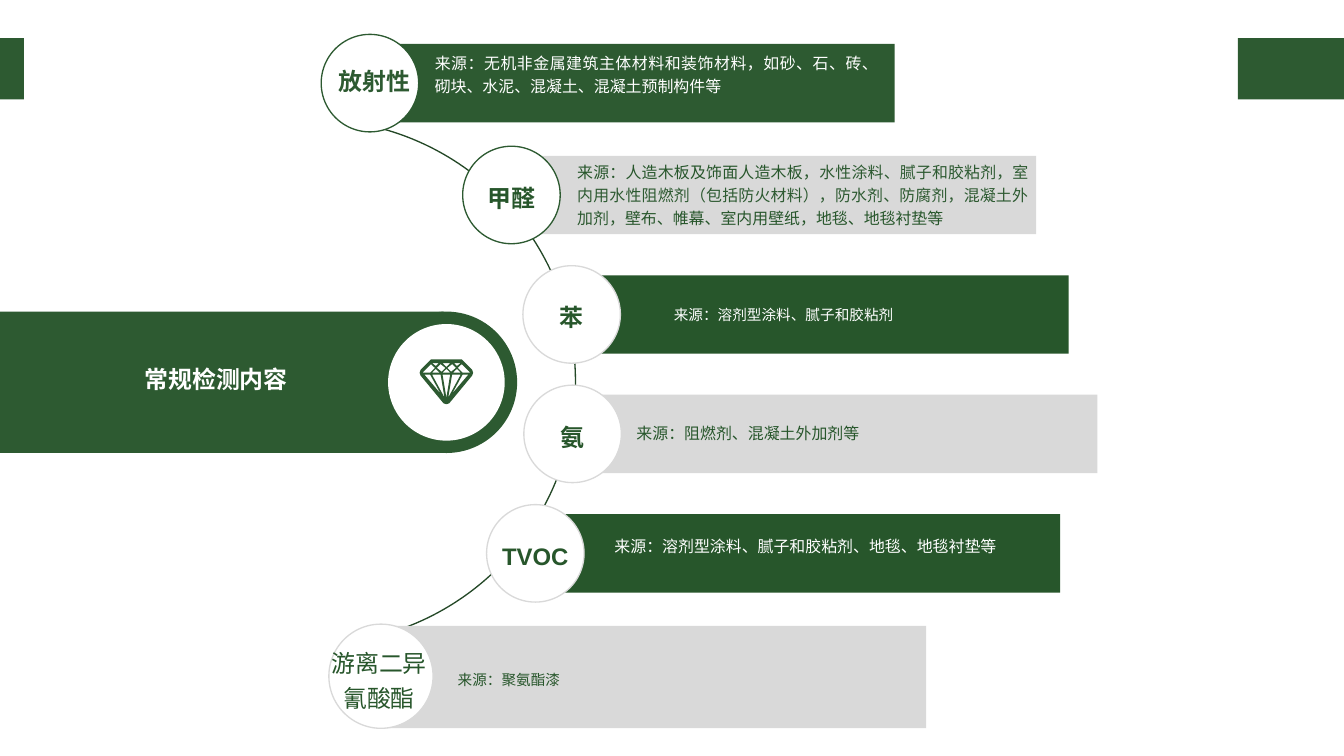
from pptx import Presentation
from pptx.dml.color import RGBColor
from pptx.enum.shapes import MSO_SHAPE
from pptx.enum.text import MSO_ANCHOR, MSO_AUTO_SIZE, PP_ALIGN
from pptx.util import Inches, Pt

RECTANGLE, OVAL, ARC = MSO_SHAPE.RECTANGLE, MSO_SHAPE.OVAL, MSO_SHAPE.ARC
LEFT, CENTER, JUSTIFY = PP_ALIGN.LEFT, PP_ALIGN.CENTER, PP_ALIGN.JUSTIFY
TOP, MIDDLE = MSO_ANCHOR.TOP, MSO_ANCHOR.MIDDLE
NO_AUTOFIT = MSO_AUTO_SIZE.NONE

GREEN, DEEP_GREEN, ARC_GREEN = "2D5A31", "27562B", "244827"
GRAY, WHITE = "D9D9D9", "FFFFFF"

presentation = Presentation()
presentation.slide_width = Inches(14.06)
presentation.slide_height = Inches(7.91)
slide = presentation.slides.add_slide(presentation.slide_layouts[5])


def write(shape, lines, size=12, bold=False, align=JUSTIFY, anchor=TOP,
          wrap=True, margins=(0.1, 0.05, 0.1, 0.05)):
    """Fill a shape with lines; each line is a list of (text, colour) runs."""
    frame = shape.text_frame
    frame.auto_size = NO_AUTOFIT
    frame.word_wrap = wrap
    frame.vertical_anchor = anchor
    (frame.margin_left, frame.margin_top,
     frame.margin_right, frame.margin_bottom) = map(Inches, margins)
    for index, runs in enumerate(lines):
        paragraph = frame.add_paragraph() if index else frame.paragraphs[0]
        paragraph.alignment = align
        paragraph.line_spacing = 1.2
        for text, color in runs:
            run = paragraph.add_run()
            run.text = text
            run.font.name = "Arial"
            run.font.size = Pt(size)
            run.font.bold = bold
            run.font.color.rgb = RGBColor.from_string(color)


def draw(kind, left, top, width, height, fill=None, line=None):
    shape = slide.shapes.add_shape(
        kind, Inches(left), Inches(top), Inches(width), Inches(height))
    shape.shadow.inherit = False
    if fill:
        shape.fill.solid()
        shape.fill.fore_color.rgb = RGBColor.from_string(fill)
    else:
        shape.fill.background()
    if line:
        shape.line.color.rgb = RGBColor.from_string(line)
        shape.line.width = Pt(1)
    else:
        shape.line.fill.background()
    return shape


# Title bar with its round end
title = slide.shapes.title
title.left, title.top = Inches(0), Inches(3.26)
title.width, title.height = Inches(4.64), Inches(1.48)
title.fill.solid()
title.fill.fore_color.rgb = RGBColor.from_string(GREEN)
write(title, [[("常规检测内容", WHITE)]], size=18, bold=True, align=LEFT,
      anchor=MIDDLE, margins=(1.51, 0, 0.1, 0.13))
draw(OVAL, 3.93, 3.26, 1.48, 1.48, GREEN)
draw(OVAL, 4.06, 3.39, 1.22, 1.22, WHITE)

# Diamond icon, in hundredths of an inch, symmetric about x = 467
AXIS = 467
left_outline = [(467, 423), (464, 422), (440, 393), (439, 390),
                (440, 387), (449, 378), (451, 376)]
left_facets = [
    [(451, 381), (455, 385), (450, 390), (442, 390)],
    [(461, 412), (444, 392), (450, 392)],
    [(461, 392), (465, 416), (452, 392)],
    [(456, 386), (460, 390), (452, 390)],
    [(456, 383), (452, 380), (459, 380)],
    [(462, 389), (457, 385), (461, 381), (466, 385)],
]
middle_facets = [
    [(467, 384), (463, 380), (471, 380)],
    [(471, 392), (467, 416), (463, 392)],
    [(471, 390), (463, 390), (467, 386)],
]
right_outline, *right_facets = [
    [(2 * AXIS - x, y) for x, y in half] for half in [left_outline, *left_facets]]
outline = left_outline + right_outline[:0:-1]
builder = slide.shapes.build_freeform(*outline[0], scale=Inches(0.01))
builder.add_line_segments(outline[1:])
for facet in left_facets + middle_facets + right_facets:
    builder.move_to(*facet[0])
    builder.add_line_segments(facet[1:])
diamond = builder.convert_to_shape()
diamond.shadow.inherit = False
diamond.fill.solid()
diamond.fill.fore_color.rgb = RGBColor.from_string(GREEN)
diamond.line.fill.background()

# Arc linking the circles; an adjustment is 0.6 per degree
arc = draw(ARC, 0.53, 1.25, 5.49, 5.49, line=ARC_GREEN)
arc.adjustments[0] = 282 * 0.6
arc.adjustments[1] = 76 * 0.6

# Corner blocks
draw(RECTANGLE, 0, 0.4, 0.25, 0.64, GREEN)
draw(RECTANGLE, 12.95, 0.4, 1.11, 0.64, GREEN)

# Pollutants: bar, bar colour, circle, circle line, label lines,
# label colour, bold, label margins, source box, source size, source runs
CENTERED = (0, 0, 0, 0)
pollutants = [
    ((3.87, 0.46, 5.49, 0.82), GREEN, (3.36, 0.36, 1.02), GREEN,
     ["放射性"], GREEN, True, (0.1, 0, 0, 0.11), (4.45, 0.47, 4.84, 0.59), 12,
     [("来源：无机非金属建筑主体材料和装饰材料，如砂、石、砖、砌块、水泥、混凝土、混凝土预制构件等", WHITE)]),
    ((5.35, 1.63, 5.49, 0.82), GRAY, (4.84, 1.53, 1.02), GREEN,
     ["甲醛"], DEEP_GREEN, True, CENTERED, (5.94, 1.61, 4.92, 0.83), 12,
     [("来源：人造木板及饰面人造木板，", DEEP_GREEN),
      ("水性涂料、腻子和胶粘剂，室内用水性阻燃剂（包括防火材料），防水剂、防腐剂，混凝土外加剂，", GREEN),
      ("壁布、帷幕、室内用壁纸，地毯、地毯衬垫等", DEEP_GREEN)]),
    ((5.98, 2.88, 5.2, 0.82), DEEP_GREEN, (5.47, 2.78, 1.02), GRAY,
     ["苯"], DEEP_GREEN, True, CENTERED, (6.95, 3.12, 4.22, 0.3), 11,
     [("来源：溶剂型涂料、腻子和胶粘剂", WHITE)]),
    ((5.99, 4.13, 5.49, 0.82), GRAY, (5.48, 4.03, 1.02), GRAY,
     ["氨"], DEEP_GREEN, True, CENTERED, (6.56, 4.34, 4.92, 0.32), 12,
     [("来源：阻燃剂、混凝土外加剂等", DEEP_GREEN)]),
    ((5.6, 5.38, 5.49, 0.82), DEEP_GREEN, (5.09, 5.28, 1.02), GRAY,
     ["TVOC"], DEEP_GREEN, True, CENTERED, (6.33, 5.52, 4.77, 0.32), 12,
     [("来源：溶剂型涂料、腻子和胶粘剂、地毯、地毯衬垫等", WHITE)]),
    ((3.95, 6.55, 5.74, 1.07), GRAY, (3.44, 6.53, 1.09), GRAY,
     ["游离二异", "氰酸酯"], DEEP_GREEN, False, (0, 0.03, 0.04, 0),
     (4.69, 6.93, 4.84, 0.3), 11, [("来源：聚氨酯漆", DEEP_GREEN)]),
]
for (bar, bar_color, (left, top, diameter), ring_color, label, label_color,
     bold, margins, source_box, source_size, source) in pollutants:
    draw(RECTANGLE, *bar, bar_color)
    circle = draw(OVAL, left, top, diameter, diameter, WHITE, ring_color)
    write(circle, [[(line, label_color)] for line in label], size=18, bold=bold,
          align=CENTER, anchor=MIDDLE, wrap=False, margins=margins)
    text_box = slide.shapes.add_textbox(*map(Inches, source_box))
    write(text_box, [source], size=source_size)

presentation.save("out.pptx")
